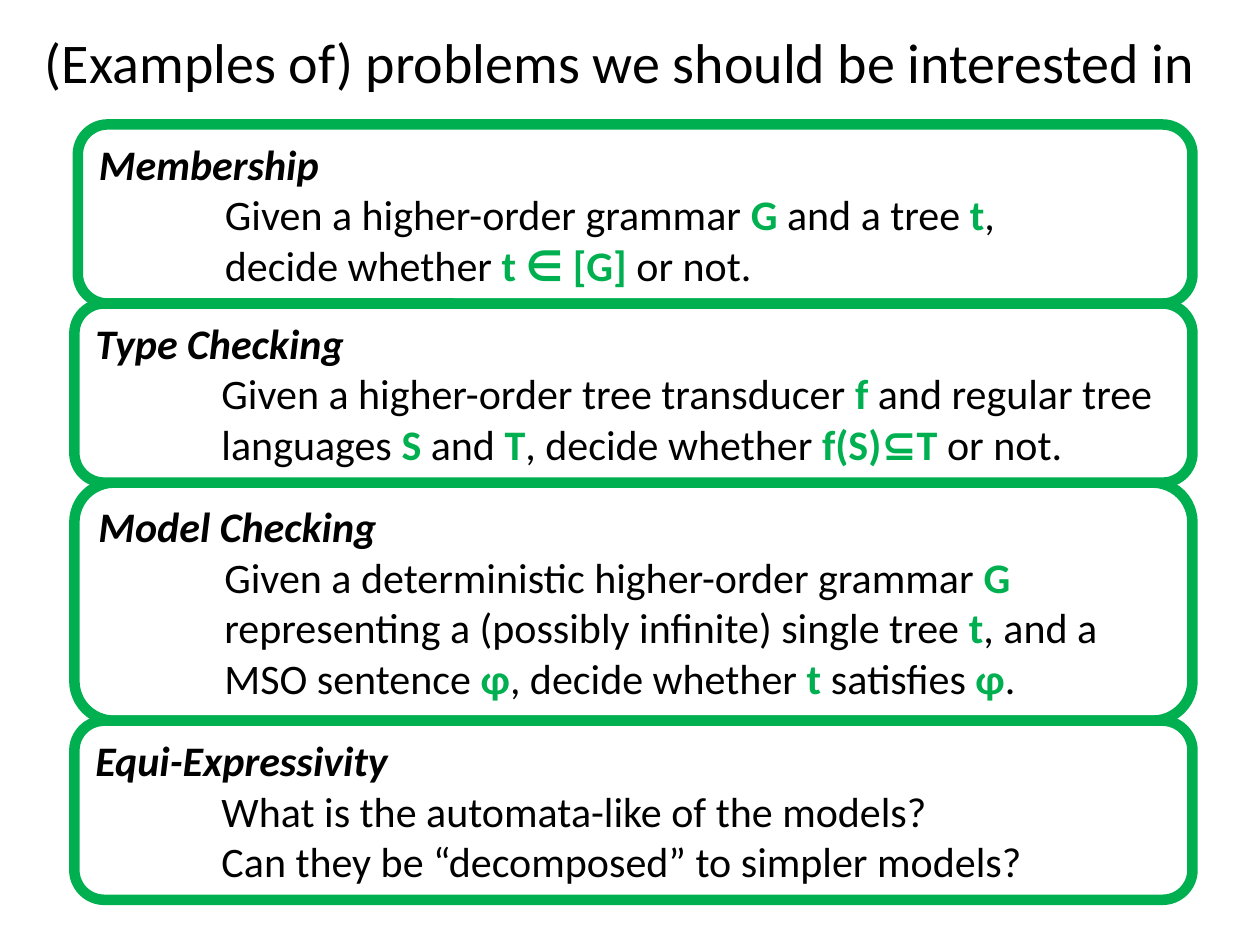
from dataclasses import dataclass

from pptx import Presentation
from pptx.dml.color import RGBColor
from pptx.enum.shapes import MSO_SHAPE
from pptx.enum.text import MSO_ANCHOR, MSO_AUTO_SIZE, PP_ALIGN
from pptx.util import Cm, Pt

BLACK = RGBColor(0x00, 0x00, 0x00)
WHITE = RGBColor(0xFF, 0xFF, 0xFF)
GREEN = RGBColor(0x00, 0xB0, 0x50)

STACK_TOP = 2.51
RIGHT_EDGE = 24.04

# Left edge, height, heading and paragraphs; *stars* enclose accented symbols.
PROBLEMS = [
    (1.57, 3.61, "Membership", [
        "Given a higher-order grammar *G* and a tree *t*,\n"
        "decide whether *t ∈ [G]* or not."]),
    (1.5, 3.61, "Type Checking", [
        "Given a higher-order tree transducer *f* and regular tree\n"
        "languages *S* and *T*, decide whether *f(S)⊆T* or not."]),
    (1.5, 4.8, "Model Checking", [
        "Given a deterministic higher-order grammar *G*\n"
        "representing a (possibly infinite) single tree *t*, and a\n"
        "MSO sentence *φ*, decide whether *t* satisfies *φ*."]),
    (1.5, 3.61, "Equi-Expressivity", [
        "What is the automata-like of the models?",
        "Can they be “decomposed” to simpler models?"]),
]


def apply(target, values):
    for name, value in values.items():
        setattr(target, name, value)


@dataclass
class PageBuilder:
    page: object
    font_name: str = "Calibri"
    title_size: int = 32
    body_size: int = 24
    line_width: int = 6
    body_indent: float = 2.54

    def span(self, para, text, size, color=BLACK, **styles):
        span = para.add_run()
        span.text = text
        apply(span.font, {"name": self.font_name, "size": Pt(size), **styles})
        span.font.color.rgb = color

    def title(self, text, left, top, width, height):
        box = self.page.shapes.title
        apply(box, {"left": Cm(left), "top": Cm(top),
                    "width": Cm(width), "height": Cm(height)})
        apply(box.text_frame, {"word_wrap": True,
                               "auto_size": MSO_AUTO_SIZE.NONE,
                               "vertical_anchor": MSO_ANCHOR.MIDDLE})
        para = box.text_frame.paragraphs[0]
        para.alignment = PP_ALIGN.CENTER
        self.span(para, text, self.title_size)

    def body(self, para, text):
        """Write an indented paragraph, with starred parts bold and green."""
        para.alignment = PP_ALIGN.LEFT
        properties = para._p.get_or_add_pPr()
        properties.set("marL", str(Cm(self.body_indent)))
        properties.set("indent", "0")
        for number, line in enumerate(text.split("\n")):
            if number:
                para.add_line_break()
            for position, part in enumerate(line.split("*")):
                accented = position % 2 == 1
                if part:
                    self.span(para, part, self.body_size,
                              GREEN if accented else BLACK, bold=accented)

    def problem(self, left, top, height, heading, texts):
        box = self.page.shapes.add_shape(
            MSO_SHAPE.ROUNDED_RECTANGLE, Cm(left), Cm(top),
            Cm(RIGHT_EDGE - left), Cm(height))
        box.shadow.inherit = False
        box.fill.solid()
        box.fill.fore_color.rgb = WHITE
        box.line.color.rgb = GREEN
        box.line.width = Pt(self.line_width)
        frame = box.text_frame
        apply(frame, {"word_wrap": True, "vertical_anchor": MSO_ANCHOR.MIDDLE})
        para = frame.paragraphs[0]
        para.alignment = PP_ALIGN.LEFT
        self.span(para, heading, self.body_size, bold=True, italic=True)
        for text in texts:
            self.body(frame.add_paragraph(), text)


def main():
    deck = Presentation()
    apply(deck, {"slide_width": Cm(25.4), "slide_height": Cm(19.05)})
    builder = PageBuilder(deck.slides.add_slide(deck.slide_layouts[5]))
    builder.title("(Examples of) problems we should be interested in",
                  0.3, 0.36, 24.41, 1.75)

    stack, top = [], STACK_TOP
    for left, height, heading, texts in PROBLEMS:
        stack.append((left, top, height, heading, texts))
        top += height
    # The tallest box lies behind its neighbours' borders.
    for problem in sorted(stack, key=lambda item: -item[2]):
        builder.problem(*problem)

    deck.save("out.pptx")


if __name__ == "__main__":
    main()
